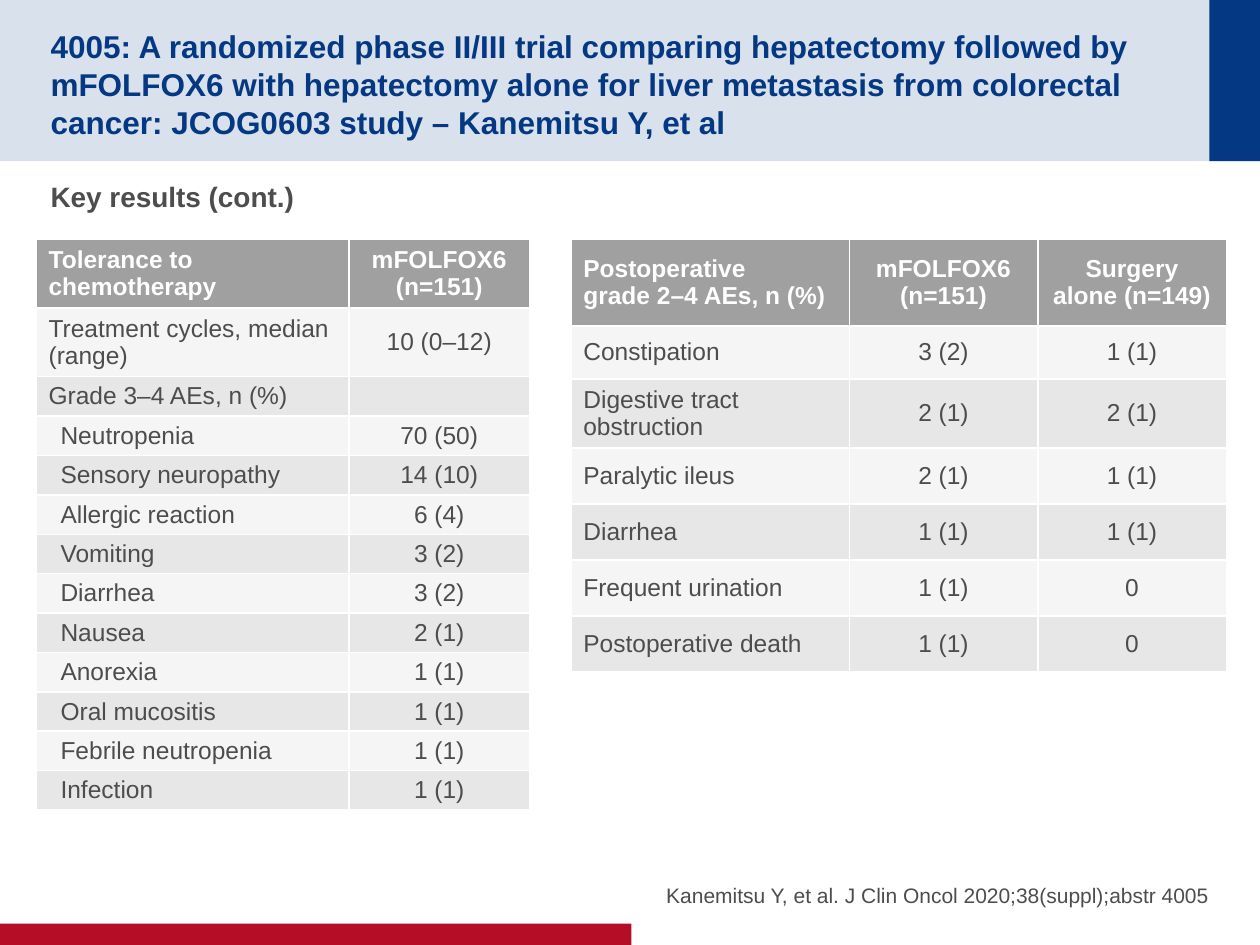
from lxml import etree
from pptx import Presentation
from pptx import util as u
from pptx.dml.color import RGBColor
from pptx.enum import shapes, text
from pptx.oxml import ns

NAVY, RED, GREY, DARK, WHITE = "043882", "B60D27", "A0A0A0", "4D4D4D", "FFFFFF"
LEFT, CENTER, RIGHT = text.PP_ALIGN.LEFT, text.PP_ALIGN.CENTER, text.PP_ALIGN.RIGHT
TOP, MIDDLE, BOTTOM = text.MSO_ANCHOR.TOP, text.MSO_ANCHOR.MIDDLE, text.MSO_ANCHOR.BOTTOM


def paint(fill, color, opacity=100):
    fill.solid()
    fill.fore_color.rgb = RGBColor.from_string(color)
    if opacity < 100:
        tint = fill._xPr.find(ns.qn("a:solidFill"))[0]
        etree.SubElement(tint, ns.qn("a:alpha"), val=str(opacity * 1000))


def write(paragraph, words, size, color, bold, align):
    paragraph.alignment = align
    for i, line in enumerate(words.split("\v")):
        if i:
            paragraph.add_line_break()
        run = paragraph.add_run()
        run.text = line
        run.font.name = "Arial"
        run.font.size = u.Pt(size)
        run.font.bold = bold
        paint(run.font.fill, color)


deck = Presentation()
deck.slide_width, deck.slide_height = u.Cm(25.4), u.Cm(19.05)
slide = deck.slides.add_slide(deck.slide_layouts[6])

for left, top, width, height, color, opacity in [
    (0, 0, 25.4, 3.25, NAVY, 15),
    (24.38, 0, 1.02, 3.25, NAVY, 100),
    (0, 18.62, 12.73, 0.43, RED, 100),
]:
    band = slide.shapes.add_shape(
        shapes.MSO_SHAPE.RECTANGLE, u.Cm(left), u.Cm(top), u.Cm(width), u.Cm(height))
    band.shadow.inherit = False
    band.line.fill.background()
    paint(band.fill, color, opacity)

title = ("4005: A randomized phase II/III trial comparing hepatectomy followed by "
         "mFOLFOX6 with hepatectomy alone for liver metastasis from colorectal cancer: "
         "JCOG0603 study – Kanemitsu Y, et al")
citation = "Kanemitsu Y, et al. J Clin Oncol 2020;38(suppl);abstr 4005"

for words, left, top, width, height, size, color, bold, align, anchor, inset in [
    (title, 1.02, 0.51, 22.89, 2.24, 18, NAVY, True, LEFT, MIDDLE, (0.13, 0)),
    ("Key results (cont.)", 1.02, 3.48, 23.37, 13.18, 16, DARK, True, LEFT, TOP, (0.13, 0.13)),
    (citation, 12.9, 16.94, 11.48, 1.35, 12, DARK, False, RIGHT, BOTTOM, (0, 0)),
]:
    frame = slide.shapes.add_textbox(
        u.Cm(left), u.Cm(top), u.Cm(width), u.Cm(height)).text_frame
    frame.word_wrap = True
    frame.vertical_anchor = anchor
    frame.margin_left = frame.margin_right = 0
    frame.margin_top, frame.margin_bottom = u.Cm(inset[0]), u.Cm(inset[1])
    write(frame.paragraphs[0], words, size, color, bold, align)

tolerance = [
    ("Tolerance to chemotherapy", "mFOLFOX6 (n=151)"),
    ("Treatment cycles, median (range)", "10 (0–12)"),
    ("Grade 3–4 AEs, n (%)", ""),
    ("Neutropenia", "70 (50)"),
    ("Sensory neuropathy", "14 (10)"),
    ("Allergic reaction", "6 (4)"),
    ("Vomiting", "3 (2)"),
    ("Diarrhea", "3 (2)"),
    ("Nausea", "2 (1)"),
    ("Anorexia", "1 (1)"),
    ("Oral mucositis", "1 (1)"),
    ("Febrile neutropenia", "1 (1)"),
    ("Infection", "1 (1)"),
]
postoperative = [
    ("Postoperative\vgrade 2–4 AEs, n (%)", "mFOLFOX6\n(n=151)", "Surgery alone (n=149)"),
    ("Constipation", "3 (2)", "1 (1)"),
    ("Digestive tract obstruction", "2 (1)", "2 (1)"),
    ("Paralytic ileus", "2 (1)", "1 (1)"),
    ("Diarrhea", "1 (1)", "1 (1)"),
    ("Frequent urination", "1 (1)", "0"),
    ("Postoperative death", "1 (1)", "0"),
]

for rows, left, widths, heights, first_indented in [
    (tolerance, 0.73, [6.31, 3.63], [1.38, 1.32] + [0.79] * 11, 3),
    (postoperative, 11.51, [5.61, 3.8, 3.8], [1.75, 1.07, 1.39] + [1.13] * 4, len(postoperative)),
]:
    table = slide.shapes.add_table(
        len(rows), len(widths), u.Cm(left), u.Cm(4.82),
        u.Cm(sum(widths)), u.Cm(sum(heights))).table
    for column, width in zip(table.columns, widths):
        column.width = u.Cm(width)
    for r, (values, height) in enumerate(zip(rows, heights)):
        table.rows[r].height = u.Cm(height)
        header = r == 0
        for c, value in enumerate(values):
            cell = table.cell(r, c)
            cell.vertical_anchor = MIDDLE
            cell.margin_left = cell.margin_right = u.Cm(0.25)
            cell.margin_top = cell.margin_bottom = u.Cm(0.1)
            paint(cell.fill, GREY, 100 if header else 10 if r % 2 else 25)
            for position, side in enumerate(("a:lnT", "a:lnB")):
                border = etree.Element(ns.qn(side), w=str(u.Pt(1)))
                border_fill = etree.SubElement(border, ns.qn("a:solidFill"))
                etree.SubElement(border_fill, ns.qn("a:srgbClr"), val=WHITE)
                cell._tc.tcPr.insert(position, border)
            for i, line in enumerate(value.split("\n")):
                paragraph = cell.text_frame.add_paragraph() if i else cell.text_frame.paragraphs[0]
                if not line:
                    etree.SubElement(paragraph._p, ns.qn("a:endParaRPr"), sz="1400")
                    continue
                write(paragraph, line, 14, WHITE if header else DARK, header, CENTER if c else LEFT)
                if c == 0 and r >= first_indented:
                    paragraph.level = 1
                    paragraph._p.get_or_add_pPr().set("marL", str(u.Cm(0.24)))

deck.save("out.pptx")
